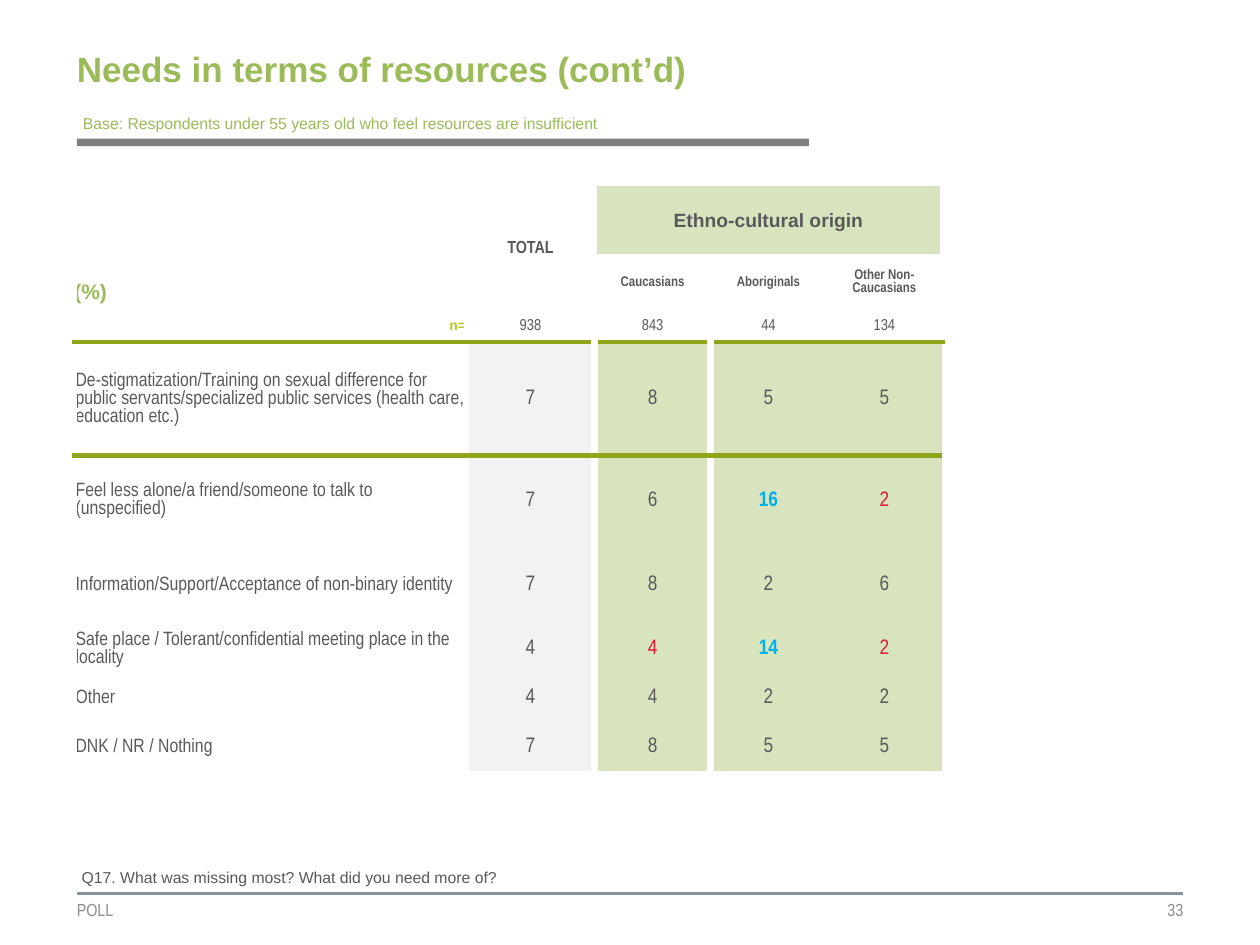
from dataclasses import dataclass

from lxml.etree import SubElement
from pptx import Presentation
from pptx.dml.color import RGBColor
from pptx.enum.shapes import MSO_CONNECTOR, MSO_SHAPE
from pptx.enum.text import MSO_ANCHOR as Anchor, PP_ALIGN as Align
from pptx.oxml.ns import qn
from pptx.util import Inches, Pt


@dataclass(frozen=True)
class Theme:
    sans: str = "Arial"
    narrow: str = "Arial Narrow"
    green: str = "9BBB59"
    text: str = "595959"
    muted: str = "8C8C8C"
    bar: str = "7F7F7F"
    rule: str = "88959E"
    base_label: str = "B5CC22"
    header_rule: str = "91A51B"
    total_fill: str = "F2F2F2"
    group_fill: str = "D7E4BD"
    white: str = "FFFFFF"
    higher: str = "00B0F0"
    lower: str = "E31836"
    title_size: float = 20
    value_size: float = 12
    label_size: float = 11
    head_size: float = 10
    note_size: float = 9
    small_size: float = 8


THEME = Theme()
NO_STYLE = "{2D5ABB26-0587-4C30-8999-92F81FD0307C}"
COLUMNS = [3.11, 1.02, 0.92, 0.92, 0.92]
HEADER_ROWS = [0.34, 0.15, 0.45, 0.25]
GROUPS = ["Caucasians", "Aboriginals", "Other Non-Caucasians"]
BASES = ["938", "843", "44", "134"]
# Row height, need, then values for the total and each group;
# "+" marks a significantly higher value, "-" a lower one
NEEDS = [
    (0.9, "De-stigmatization/Training on sexual difference for public "
          "servants/specialized public services (health care, education etc.)",
     ["7", "8", "5", "5"]),
    (0.71, "Feel less alone/a friend/someone to talk to (unspecified)",
     ["7", "6", "16+", "2-"]),
    (0.63, "Information/Support/Acceptance of non-binary identity",
     ["7", "8", "2", "6"]),
    (0.39, "Safe place / Tolerant/confidential meeting place in the locality",
     ["4", "4-", "14+", "2-"]),
    (0.39, "Other", ["4", "4", "2", "2"]),
    (0.39, "DNK / NR / Nothing", ["7", "8", "5", "5"]),
]


def rgb(value):
    return RGBColor.from_string(value)


def add_run(paragraph, text, size, font, color=THEME.text, bold=False):
    run = paragraph.add_run()
    run.text = text
    run.font.size = Pt(size)
    run.font.name = font
    run.font.bold = bold
    run.font.color.rgb = rgb(color)


def add_text(slide, box, text, size, font, color, bold=False,
             align=Align.LEFT, inset=(0, 0), anchor=Anchor.MIDDLE, wrap=True):
    frame = slide.shapes.add_textbox(*map(Inches, box)).text_frame
    frame.word_wrap = wrap
    frame.vertical_anchor = anchor
    frame.margin_left = frame.margin_right = Inches(inset[0])
    frame.margin_top = frame.margin_bottom = Inches(inset[1])
    paragraph = frame.paragraphs[0]
    paragraph.alignment = align
    add_run(paragraph, text, size, font, color, bold)


def set_borders(cell, **borders):
    """Draw cell borders; each side L, R, T or B takes (colour, points)."""
    properties = cell._tc.get_or_add_tcPr()
    for side in "LRTB":
        if side in borders:
            color, width = borders[side]
            line = SubElement(properties, qn(f"a:ln{side}"), w=str(Pt(width)))
            fill = SubElement(line, qn("a:solidFill"))
            SubElement(fill, qn("a:srgbClr"), val=color)


def set_cell(cell, text, size, font=THEME.narrow, color=THEME.text, bold=False,
             align=Align.CENTER, anchor=Anchor.MIDDLE,
             insets=(0.01, 0.01, 0.01, 0), spacing=None):
    (cell.margin_left, cell.margin_top,
     cell.margin_right, cell.margin_bottom) = map(Inches, insets)
    cell.vertical_anchor = anchor
    paragraph = cell.text_frame.paragraphs[0]
    paragraph.alignment = align
    paragraph.line_spacing = spacing
    add_run(paragraph, text, size, font, color, bold)


def paint_cell(cell, row, column):
    """Give a cell the borders and fill of its place in the table."""
    last_header = len(HEADER_ROWS) - 1
    thin, gap = (THEME.white, 3), (THEME.white, 4.5)
    rule = (THEME.header_rule, 3)
    in_body = row > last_header
    borders = {}
    if not in_body or column < 2:
        borders.update(L=thin, R=thin)
    if in_body and column == 1:
        borders["R"] = gap
    if in_body and column == 2:
        borders["L"] = gap
    if row == last_header:
        borders["B"] = rule
    if row == last_header + 1:
        borders["T"] = rule
    set_borders(cell, **borders)

    fill = None
    if column > 1 and (in_body or row < 2):
        fill = THEME.group_fill
    elif column == 1 and in_body:
        fill = THEME.total_fill
    if fill:
        cell.fill.solid()
        cell.fill.fore_color.rgb = rgb(fill)
    else:
        cell.fill.background()


def add_header(slide, left, top, width):
    add_text(slide, (left, top, width, 0.69),
             "Needs in terms of resources (cont’d)",
             THEME.title_size, THEME.sans, THEME.green, bold=True)
    add_text(slide, (left - 0.05, top + 0.65, 4.47, 0.25),
             "Base: Respondents under 55 years old who feel resources are insufficient",
             THEME.note_size, THEME.sans, THEME.green,
             inset=(0.1, 0.05), anchor=Anchor.TOP, wrap=False)
    bar = slide.shapes.add_shape(
        MSO_SHAPE.RECTANGLE, *map(Inches, (left, top + 0.9, 5.81, 0.06)))
    bar.shadow.inherit = False
    bar.fill.solid()
    bar.fill.fore_color.rgb = rgb(THEME.bar)
    bar.line.fill.background()


def add_needs_table(slide, left, top):
    heights = HEADER_ROWS + [need[0] for need in NEEDS]
    table = slide.shapes.add_table(
        len(heights), len(COLUMNS),
        *map(Inches, (left, top, sum(COLUMNS), sum(heights)))).table
    table.first_row = table.horz_banding = False
    table._tbl.tblPr.find(qn("a:tableStyleId")).text = NO_STYLE
    for column, width in zip(table.columns, COLUMNS):
        column.width = Inches(width)
    for row, height in zip(table.rows, heights):
        row.height = Inches(height)

    # Header: total, group heading, unit, group names
    for first, last in [((0, 1), (2, 1)), ((0, 2), (1, 4)), ((1, 0), (2, 0))]:
        table.cell(*first).merge(table.cell(*last))
    set_cell(table.cell(0, 1), "TOTAL", THEME.head_size, bold=True)
    set_cell(table.cell(0, 2), "Ethno-cultural origin", THEME.label_size,
             THEME.sans, bold=True)
    side_insets = (0, 0.05, 0, 0.05)
    set_cell(table.cell(1, 0), "(%)", THEME.value_size, THEME.sans, THEME.green,
             True, Align.LEFT, Anchor.BOTTOM, side_insets, 0.95)
    for column, group in enumerate(GROUPS, 2):
        set_cell(table.cell(2, column), group, THEME.small_size, bold=True)

    # Sample sizes
    set_cell(table.cell(3, 0), "n=", THEME.small_size, THEME.sans,
             THEME.base_label, True, Align.RIGHT, insets=side_insets, spacing=0.95)
    for column, base in enumerate(BASES, 1):
        set_cell(table.cell(3, column), base, THEME.note_size)

    # Needs and their percentages
    marks = {"+": THEME.higher, "-": THEME.lower}
    for row, (_, need, values) in enumerate(NEEDS, len(HEADER_ROWS)):
        set_cell(table.cell(row, 0), need, THEME.label_size, align=Align.LEFT)
        for column, value in enumerate(values, 1):
            set_cell(table.cell(row, column), value.rstrip("+-"), THEME.value_size,
                     color=marks.get(value[-1], THEME.text), bold=value[-1] == "+")

    # Borders and fills; empty cells shrink so that rows keep their height
    for row in range(len(heights)):
        for column in range(len(COLUMNS)):
            cell = table.cell(row, column)
            paint_cell(cell, row, column)
            if not cell.text_frame.text:
                cell.margin_top = cell.margin_bottom = 0
                SubElement(cell.text_frame.paragraphs[0]._p,
                           qn("a:endParaRPr"), sz="100")


def add_footer(slide, left, top, width):
    add_text(slide, (left - 0.06, top - 0.25, 8.55, 0.25),
             "Q17. What was missing most? What did you need more of?",
             THEME.note_size, THEME.sans, THEME.text,
             inset=(0.1, 0.05), anchor=Anchor.TOP)
    rule = slide.shapes.add_connector(
        MSO_CONNECTOR.STRAIGHT, *map(Inches, (left, top, left + width, top)))
    rule.line.color.rgb = rgb(THEME.rule)
    rule.line.width = Pt(1.5)
    SubElement(rule._element.spPr, qn("a:effectLst"))
    half = width / 2
    for x, text, align in [(left, "POLL", Align.LEFT),
                           (left + half, "33", Align.RIGHT)]:
        add_text(slide, (x, top, half, 0.26), text, THEME.head_size,
                 THEME.narrow, THEME.muted, align=align)


def main():
    deck = Presentation()
    deck.slide_width, deck.slide_height = Inches(10), Inches(7.5)
    slide = deck.slides.add_slide(deck.slide_layouts[6])
    add_header(slide, 0.61, 0.2, 7.15)
    add_needs_table(slide, 0.59, 1.48)
    add_footer(slide, 0.61, 7.09, 8.78)
    deck.save("out.pptx")


if __name__ == "__main__":
    main()
